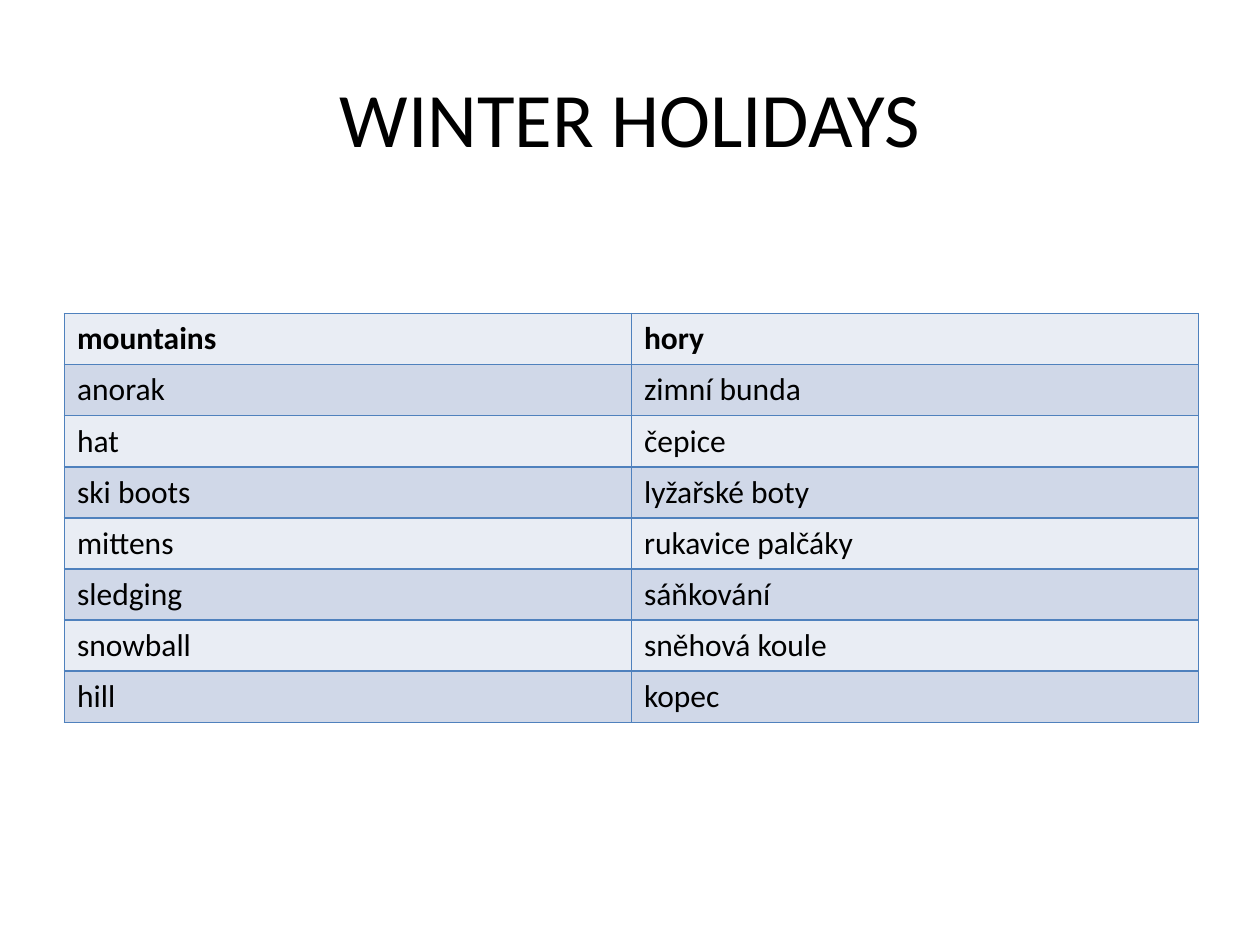
from lxml import etree
from pptx import Presentation
from pptx import util as u
from pptx.dml.color import RGBColor
from pptx.enum import text
from pptx.oxml.ns import qn

BLACK = RGBColor(0x00, 0x00, 0x00)
BORDER_BLUE = RGBColor(0x4F, 0x81, 0xBD)
BANDS = (RGBColor(0xE9, 0xED, 0xF4), RGBColor(0xD0, 0xD8, 0xE8))
FONT = "Calibri"

VOCABULARY = [
    ("mountains", "hory"),
    ("anorak", "zimní bunda"),
    ("hat", "čepice"),
    ("ski boots", "lyžařské boty"),
    ("mittens", "rukavice palčáky"),
    ("sledging", "sáňkování"),
    ("snowball", "sněhová koule"),
    ("hill", "kopec"),
]


def add_run(paragraph, words, size, bold=False):
    run = paragraph.add_run()
    run.text = words
    run.font.name = FONT
    run.font.size = u.Pt(size)
    run.font.bold = bold
    run.font.color.rgb = BLACK


def outline_cell(cell):
    properties = cell._tc.get_or_add_tcPr()
    for position, side in enumerate(("a:lnL", "a:lnR", "a:lnT", "a:lnB")):
        line = etree.Element(qn(side), w=str(u.Pt(1)))
        fill = etree.SubElement(line, qn("a:solidFill"))
        etree.SubElement(fill, qn("a:srgbClr"), val=str(BORDER_BLUE))
        properties.insert(position, line)


def place_title(slide, left, top, width, height):
    heading = slide.shapes.title
    heading.left, heading.top = left, top
    heading.width, heading.height = width, height
    frame = heading.text_frame
    frame.vertical_anchor = text.MSO_ANCHOR.MIDDLE
    frame.paragraphs[0].alignment = text.PP_ALIGN.CENTER
    add_run(frame.paragraphs[0], "WINTER HOLIDAYS", 44)


def place_vocabulary(slide, left, top, width, height):
    """Add the English-Czech word list, with its first pair in bold."""
    word_list = slide.shapes.add_table(
        len(VOCABULARY), 2, left, top, width, height).table
    for row, pair in enumerate(VOCABULARY):
        for column, word in enumerate(pair):
            cell = word_list.cell(row, column)
            cell.fill.solid()
            cell.fill.fore_color.rgb = BANDS[row % 2]
            outline_cell(cell)
            add_run(cell.text_frame.paragraphs[0], word, 18, bold=row == 0)


def main():
    deck = Presentation()
    deck.slide_width, deck.slide_height = u.Cm(25.4), u.Cm(19.05)
    slide = deck.slides.add_slide(deck.slide_layouts[5])
    place_title(slide, u.Cm(1.27), u.Cm(0.76), u.Cm(22.86), u.Cm(3.18))
    place_vocabulary(slide, u.Cm(1.3), u.Cm(6.32), u.Cm(22.86), u.Cm(8.24))
    deck.save("out.pptx")


if __name__ == "__main__":
    main()
